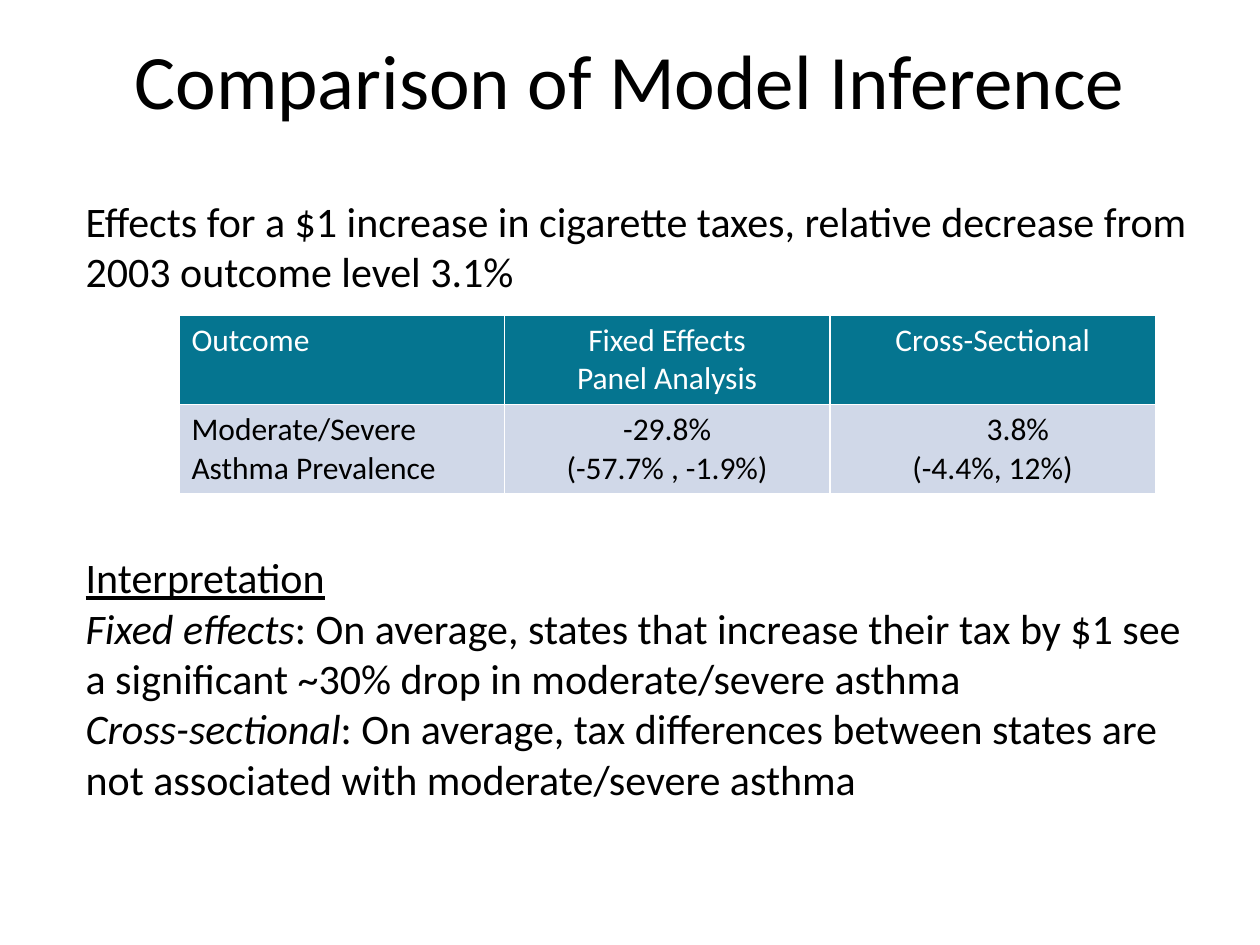
from dataclasses import dataclass

from lxml import etree
from pptx import Presentation
from pptx.dml.color import RGBColor
from pptx.enum.text import MSO_ANCHOR, MSO_AUTO_SIZE, PP_ALIGN
from pptx.oxml.ns import qn
from pptx.util import Inches, Pt

CENTER, LEFT = PP_ALIGN.CENTER, PP_ALIGN.LEFT
MIDDLE, TOP = MSO_ANCHOR.MIDDLE, MSO_ANCHOR.TOP
NO_AUTOFIT = MSO_AUTO_SIZE.NONE


@dataclass(frozen=True)
class Theme:
    font: str = "Calibri"
    ink: str = "000000"
    paper: str = "FFFFFF"
    header: str = "057590"
    band: str = "D0D8E8"
    title_size: int = 44
    body_size: int = 24
    table_size: int = 18
    border: float = 1


class SlideBuilder:
    def __init__(self, page, theme):
        self.page = page
        self.theme = theme

    def format_run(self, run, size, color):
        run.font.name = self.theme.font
        run.font.size = Pt(size)
        run.font.color.rgb = RGBColor.from_string(color)

    def place(self, holder, area, anchor):
        holder.left, holder.top, holder.width, holder.height = map(Inches, area)
        frame = holder.text_frame
        frame.auto_size = NO_AUTOFIT
        frame.vertical_anchor = anchor
        return frame

    def title(self, text, area):
        frame = self.place(self.page.shapes.title, area, MIDDLE)
        frame.text = text
        para = frame.paragraphs[0]
        para.alignment = CENTER
        self.format_run(para.runs[0], self.theme.title_size, self.theme.ink)

    def body(self, paragraphs, area):
        frame = self.place(self.page.placeholders[1], area, TOP)
        for index, (spans, gap) in enumerate(paragraphs):
            para = frame.add_paragraph() if index else frame.paragraphs[0]
            para.alignment = LEFT
            para.space_before = Pt(gap)
            properties = para._p.get_or_add_pPr()
            properties.set("marL", "0")
            properties.set("indent", "0")
            etree.SubElement(properties, qn("a:buNone"))
            for text, style in spans:
                span = para.add_run()
                span.text = text
                self.format_run(span, self.theme.body_size, self.theme.ink)
                span.font.italic = style == "italic"
                span.font.underline = style == "underline"

    def border(self, cell):
        properties = cell._tc.get_or_add_tcPr()
        for side in ("lnL", "lnR", "lnT", "lnB"):
            line = etree.SubElement(properties, qn(f"a:{side}"), w=str(Pt(self.theme.border)))
            fill = etree.SubElement(line, qn("a:solidFill"))
            etree.SubElement(fill, qn("a:srgbClr"), val=self.theme.paper)

    def cell(self, cell, text, is_header, alignment):
        theme = self.theme
        self.border(cell)
        cell.fill.solid()
        cell.fill.fore_color.rgb = RGBColor.from_string(theme.header if is_header else theme.band)
        cell.text_frame.text = text
        for para in cell.text_frame.paragraphs:
            para.alignment = alignment
            for run in para.runs:
                self.format_run(run, theme.table_size, theme.paper if is_header else theme.ink)
                run.font.bold = False

    def table(self, rows, area):
        frame = self.page.shapes.add_table(len(rows), len(rows[0]), *map(Inches, area))
        table = frame.table
        for row_index, row in enumerate(rows):
            for column_index, text in enumerate(row):
                alignment = CENTER if column_index else LEFT
                self.cell(table.cell(row_index, column_index), text, row_index == 0, alignment)
        return table


def main():
    deck = Presentation()
    deck.slide_width, deck.slide_height = Inches(10), Inches(7.5)
    page = deck.slides.add_slide(deck.slide_layouts[1])
    builder = SlideBuilder(page, Theme())

    builder.body(
        [
            ([("Effects for a $1 increase in cigarette taxes, relative decrease from "
               "2003 outcome level 3.1%", None)], 0),
            ([("Interpretation", "underline")], 146),
            ([("Fixed effects", "italic"),
              (": On average, states that increase their tax by $1 see a significant "
               "~30% drop in moderate/severe asthma", None)], 0),
            ([("Cross-sectional", "italic"),
              (": On average, tax differences between states are not associated with "
               "moderate/severe asthma", None)], 0),
        ],
        (0.58, 1.5, 9.08, 4.95),
    )
    builder.title("Comparison of Model Inference", (0.5, 0, 9, 1.25))
    table = builder.table(
        [
            ("Outcome", "Fixed Effects\nPanel Analysis", "Cross-Sectional"),
            ("Moderate/Severe Asthma Prevalence", "-29.8%\n(-57.7% , -1.9%)", "3.8%\n(-4.4%, 12%)"),
        ],
        (1.42, 2.5, 7.75, 1.4),
    )
    estimate = table.cell(1, 2).text_frame.paragraphs[0]
    estimate._p.get_or_add_pPr().set("marL", str(Inches(0.4)))

    deck.save("out.pptx")


if __name__ == "__main__":
    main()
